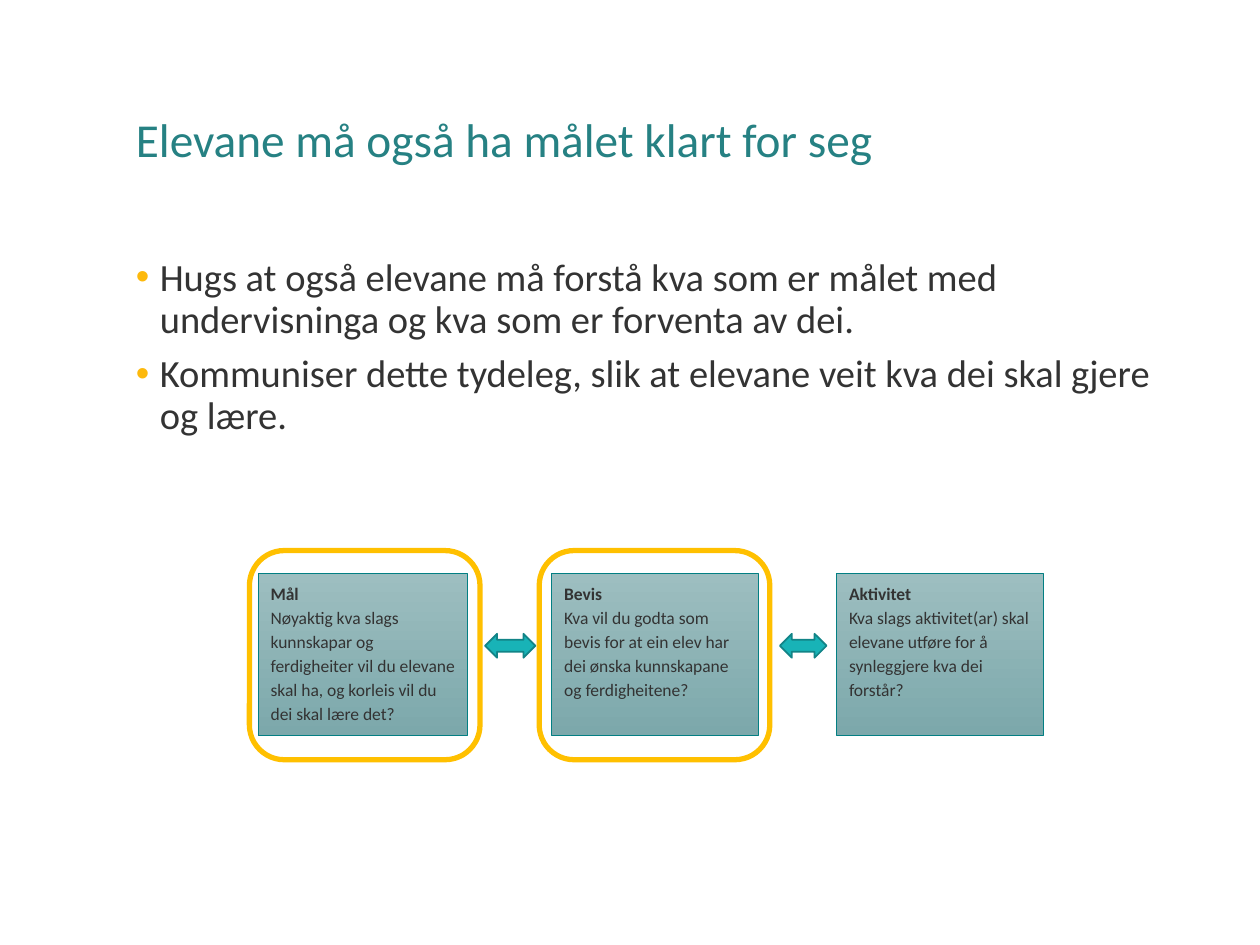
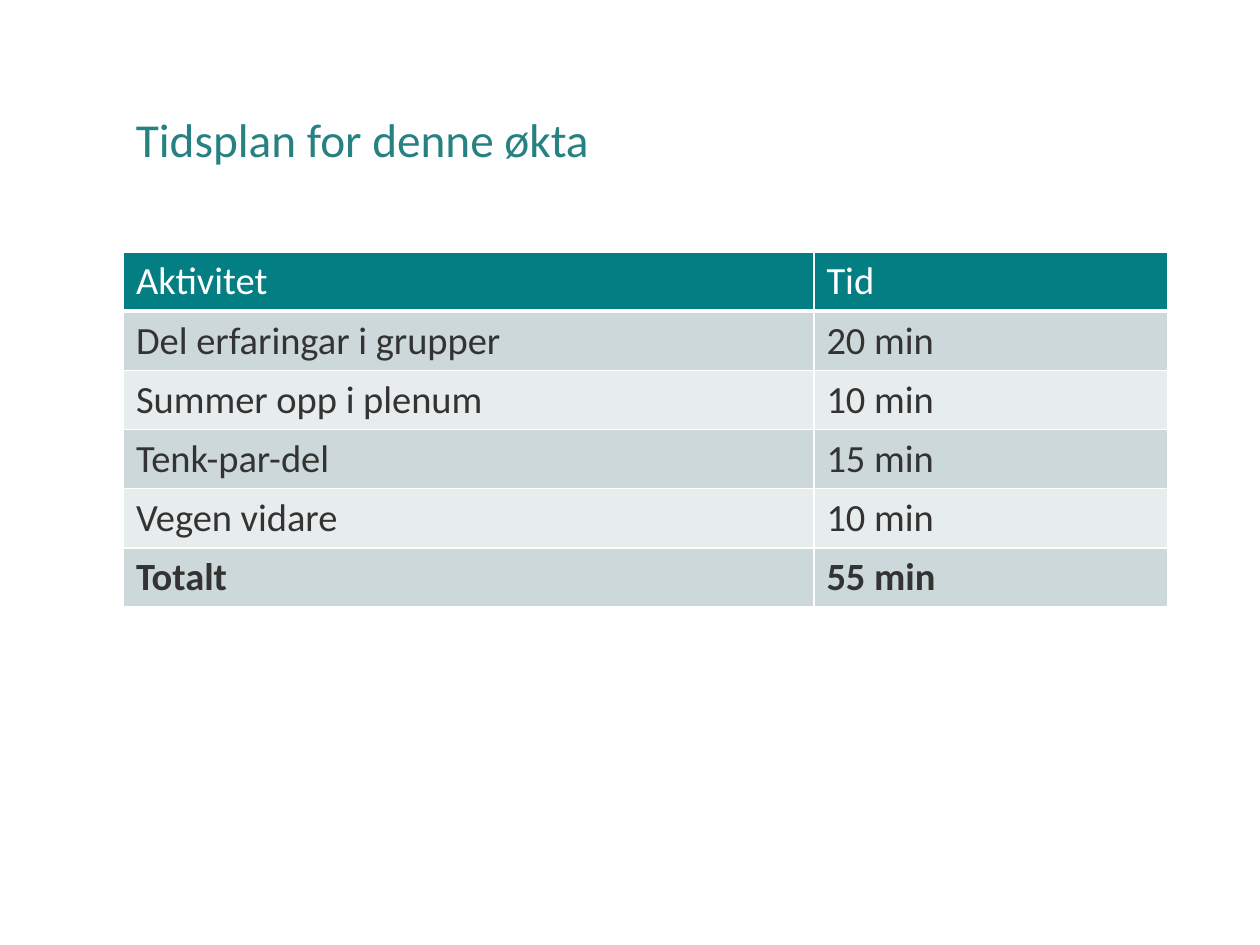
import pptx
import pptx.util
import pptx.dml.color
import pptx.enum.shapes
import pptx.enum.text
import pptx.oxml.ns
import lxml.etree

Inches = pptx.util.Inches
Pt = pptx.util.Pt
SHAPE = pptx.enum.shapes.MSO_SHAPE
ANCHOR = pptx.enum.text.MSO_ANCHOR
ALIGN = pptx.enum.text.PP_ALIGN

# Content
GOAL_TITLE = "Elevane må også ha målet klart for seg"
POINTS = [
    "Hugs at også elevane må forstå kva som er målet med undervisninga og kva som er forventa av dei.",
    "Kommuniser dette tydeleg, slik at elevane veit kva dei skal gjere og lære.",
]
CARDS = [  # left, width, heading, question
    (2.05, 1.66, "Mål", "Nøyaktig kva slags kunnskapar og ferdigheiter vil du elevane "
                        "skal ha, og korleis vil du dei skal lære det?"),
    (4.38, 1.64, "Bevis", "Kva vil du godta som bevis for at ein elev har dei ønska "
                          "kunnskapane og ferdigheitene?"),
    (6.64, 1.64, "Aktivitet", "Kva slags aktivitet(ar) skal elevane utføre for å "
                              "synleggjere kva dei forstår?"),
]
FRAMES = [1.98, 4.28]
ARROWS = [(3.85, 0.4), (6.19, 0.37)]

PLAN_TITLE = "Tidsplan for denne økta"
PLAN = [
    ("Aktivitet", "Tid"),
    ("Del erfaringar i grupper", "20 min"),
    ("Summer opp i plenum", "10 min"),
    ("Tenk-par-del", "15 min"),
    ("Vegen vidare", "10 min"),
    ("Totalt", "55 min"),
]

# Shared style
FONT = "Calibri"
INK, TITLE, TEAL, WHITE = "333333", "268183", "037F83", "FFFFFF"
GOLD, DOT = "FFC000", "FDB90C"
SHADE = ("9DBEC0", "7CA8AB")
BANDS = ("CCD8D9", "E7ECED")
LEFT, WIDE, TOP = 0.98, 8.29, 2
COLS, ROW = (5.48, 2.81), 0.47


def rgb(code):
    return pptx.dml.color.RGBColor.from_string(code)


def sub(parent, tag, **attrs):
    return lxml.etree.SubElement(parent, pptx.oxml.ns.qn(tag), attrs)


def style(para, size, color, bold=False):
    for run in para.runs:
        font = run.font
        font.name, font.size, font.bold = FONT, Pt(size), bold
        font.color.rgb = rgb(color)


def add_text(slide, top, height):
    box = slide.shapes.add_textbox(Inches(LEFT), Inches(top), Inches(WIDE), Inches(height))
    box.text_frame.word_wrap = True
    return box.text_frame


def add_slide(deck, title):
    slide = deck.slides.add_slide(deck.slide_layouts[6])
    frame = add_text(slide, 0.4, 1.45)
    frame.vertical_anchor = ANCHOR.MIDDLE
    frame.text = title
    para = frame.paragraphs[0]
    para.line_spacing = 0.9
    style(para, 27, TITLE)
    return slide


def add_shape(group, kind, left, top, width, height, line, weight):
    shape = group.shapes.add_shape(kind, *map(Inches, (left, top, width, height)))
    shape.shadow.inherit = False
    shape.line.color.rgb = rgb(line)
    shape.line.width = Pt(weight)
    return shape


def add_points(slide):
    frame = add_text(slide, TOP, 1.68)
    frame.text = "\n".join(POINTS)
    for i, para in enumerate(frame.paragraphs):
        para.line_spacing = 0.9
        if i:
            para.space_before = Pt(7.5)
        props = para._p.get_or_add_pPr()
        props.set("marL", str(Inches(0.19)))
        props.set("indent", str(-Inches(0.19)))
        sub(sub(props, "a:buClr"), "a:srgbClr", val=DOT)
        sub(props, "a:buFont", typeface="Arial")
        sub(props, "a:buChar", char="•")
        style(para, 22, INK)


def add_card(group, left, width, head, body):
    card = add_shape(group, SHAPE.RECTANGLE, left, 4.55, width, 1.29, TEAL, 0.5)
    card.fill.gradient()
    card.fill.gradient_angle = 270
    for stop, code, place in zip(card.fill.gradient_stops, SHADE, (0, 1)):
        stop.color.rgb = rgb(code)
        stop.position = place
    frame = card.text_frame
    frame.word_wrap = True
    frame.vertical_anchor = ANCHOR.TOP
    frame.text = head + "\n" + body
    for i, para in enumerate(frame.paragraphs):
        para.alignment = ALIGN.LEFT
        para.line_spacing = 1.15
        style(para, 10, INK, bold=i == 0)


def add_flow(slide):
    group = slide.shapes.add_group_shape()
    for left in FRAMES:
        frame = add_shape(group, SHAPE.ROUNDED_RECTANGLE, left, 4.37, 1.83, 1.66, GOLD, 3)
        frame.fill.background()
    for card in CARDS:
        add_card(group, *card)
    for left, width in ARROWS:
        arrow = add_shape(group, SHAPE.LEFT_RIGHT_ARROW, left, 5.03, width, 0.19, "128487", 1)
        arrow.fill.solid()
        arrow.fill.fore_color.rgb = rgb("18B3B7")


def add_edge(cell, side, weight):
    line = sub(cell._tc.get_or_add_tcPr(), "a:ln" + side, w=str(Pt(weight)))
    sub(sub(line, "a:solidFill"), "a:srgbClr", val=WHITE)


def add_plan(slide):
    table = slide.shapes.add_table(
        len(PLAN), len(COLS), Inches(LEFT), Inches(TOP),
        Inches(WIDE), Inches(ROW * len(PLAN))).table
    for col, width in zip(table.columns, COLS):
        col.width = Inches(width)
    for r, texts in enumerate(PLAN):
        table.rows[r].height = Inches(ROW)
        for c, text in enumerate(texts):
            cell = table.cell(r, c)
            for side in "LRTB":
                heavy = (r, side) in ((0, "B"), (1, "T"))
                add_edge(cell, side, 3 if heavy else 1)
            cell.fill.solid()
            cell.fill.fore_color.rgb = rgb(BANDS[(r - 1) % 2] if r else TEAL)
            cell.text_frame.text = text
            style(cell.text_frame.paragraphs[0], 22, INK if r else WHITE,
                  bold=r == len(PLAN) - 1)


def main():
    deck = pptx.Presentation()
    deck.slide_width, deck.slide_height = Inches(10), Inches(7.5)

    # Goals and how they connect
    goals = add_slide(deck, GOAL_TITLE)
    add_points(goals)
    add_flow(goals)

    # Timetable
    add_plan(add_slide(deck, PLAN_TITLE))
    deck.save("out.pptx")


if __name__ == "__main__":
    main()
